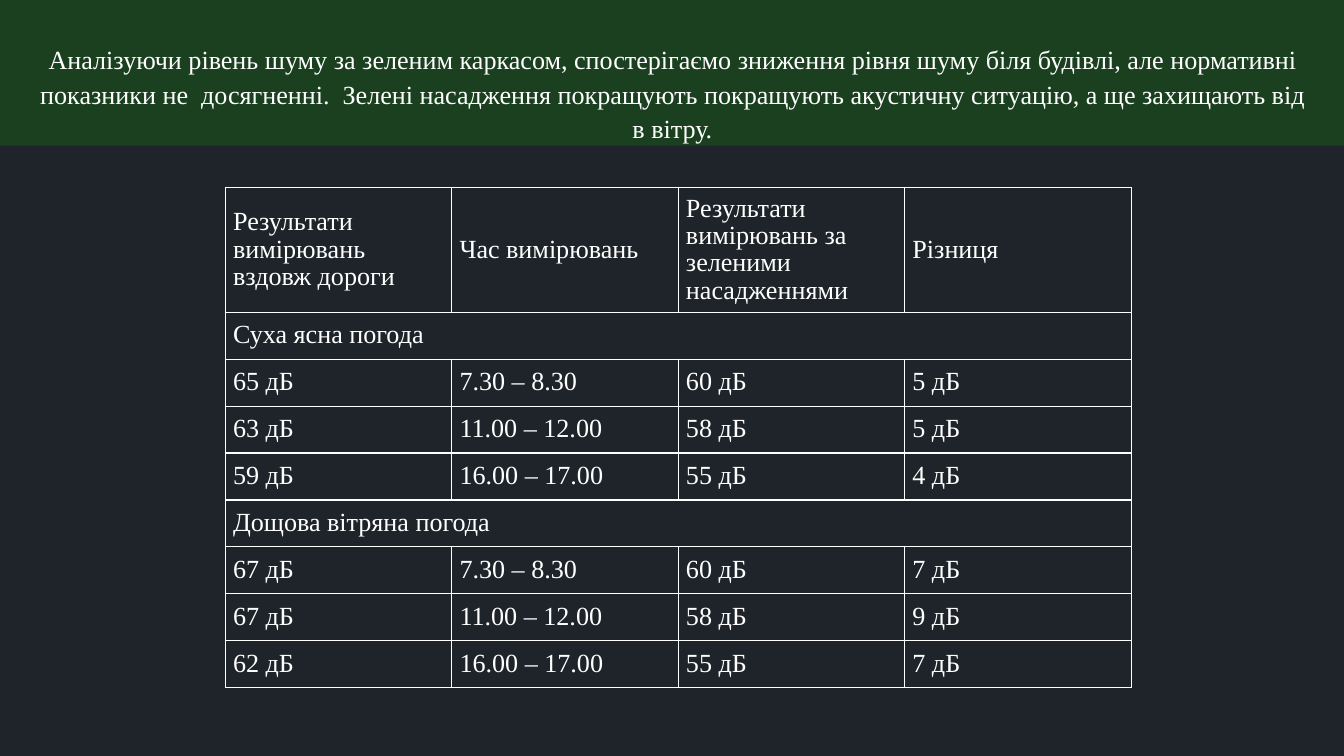
from dataclasses import dataclass

from lxml import etree
from pptx import Presentation
from pptx.dml.color import RGBColor
from pptx.enum.shapes import MSO_SHAPE
from pptx.enum.text import MSO_ANCHOR, MSO_AUTO_SIZE, PP_ALIGN
from pptx.oxml.ns import qn
from pptx.util import Emu, Pt

RECT = MSO_SHAPE.RECTANGLE
TOP, MIDDLE = MSO_ANCHOR.TOP, MSO_ANCHOR.MIDDLE
LEFT, CENTER = PP_ALIGN.LEFT, PP_ALIGN.CENTER
NO_FIT = MSO_AUTO_SIZE.NONE
SCALE = 9525


@dataclass(frozen=True)
class Theme:
    """Colours, font and type sizes of the slide."""
    back: str = "1E2429"
    band: str = "1A401F"
    ink: str = "FFFFFF"
    font: str = "Times New Roman"
    size: float = 28
    title_lead: float = 37
    cell_lead: float = 29.3
    rule: float = 1.5


THEME = Theme()
TITLE = (
    "Аналізуючи рівень шуму за зеленим каркасом, спостерігаємо зниження рівня шуму "
    "біля будівлі, але нормативні показники не  досягненні.  Зелені насадження "
    "покращують покращують акустичну ситуацію, а ще захищають від в вітру."
)
HEADS = [
    "Результати вимірювань вздовж дороги",
    "Час вимірювань",
    "Результати вимірювань за зеленими насадженнями",
    "Різниця",
]
TIMES = ["7.30 – 8.30", "11.00 – 12.00", "16.00 – 17.00"]
GROUPS = {
    "Суха ясна погода": [(65, 60, 5), (63, 58, 5), (59, 55, 4)],
    "Дощова вітряна погода": [(67, 60, 7), (67, 58, 9), (62, 55, 7)],
}


def px(count):
    """Turn pixels into EMU."""
    return Emu(round(count * SCALE))


def style(frame, align, lead):
    """Format every paragraph and run of a text frame."""
    for para in frame.paragraphs:
        para.alignment = align
        para.line_spacing = Pt(lead)
        para.space_before = para.space_after = Pt(0)
        for run in para.runs:
            run.font.name = THEME.font
            run.font.size = Pt(THEME.size)
            run.font.color.rgb = RGBColor.from_string(THEME.ink)


def add_header(slide, left, top, width, height):
    """Place the green band and the title over it."""
    band = slide.shapes.add_shape(RECT, px(left), px(top), px(width), px(height))
    band.shadow.inherit = False
    band.fill.solid()
    band.fill.fore_color.rgb = RGBColor.from_string(THEME.band)
    band.line.fill.background()
    title = slide.shapes.title
    title._element.addprevious(band._element)
    title.left, title.top = px(left + 49), px(top + 58)
    title.width, title.height = px(width - 97), px(height - 58)
    frame = title.text_frame
    frame.text = TITLE
    frame.word_wrap = True
    frame.auto_size = NO_FIT
    frame.vertical_anchor = TOP
    frame.margin_left = frame.margin_right = 0
    frame.margin_top = frame.margin_bottom = 0
    style(frame, CENTER, THEME.title_lead)


def add_rules(cell):
    """Draw a solid line on each side of a cell."""
    props = cell._tc.get_or_add_tcPr()
    for spot, side in enumerate(("a:lnL", "a:lnR", "a:lnT", "a:lnB")):
        line = etree.Element(qn(side), w=str(Pt(THEME.rule)))
        fill = etree.SubElement(line, qn("a:solidFill"))
        etree.SubElement(fill, qn("a:srgbClr"), val=THEME.ink)
        props.insert(spot, line)


def set_cell(cell, text):
    """Fill in and format one table cell."""
    cell.text_frame.text = text
    cell.vertical_anchor = MIDDLE
    cell.margin_left = cell.margin_right = px(11)
    cell.margin_top = cell.margin_bottom = px(11)
    cell.fill.background()
    add_rules(cell)
    style(cell.text_frame, LEFT, THEME.cell_lead)


def list_rows():
    """Return the table rows, with a single entry for a group row."""
    rows = [HEADS]
    for name, levels in GROUPS.items():
        rows.append([name])
        for time, (road, green, drop) in zip(TIMES, levels):
            rows.append([f"{road} дБ", time, f"{green} дБ", f"{drop} дБ"])
    return rows


def add_grid(slide, left, top, width, height):
    """Place the table of noise levels."""
    rows, cols = list_rows(), len(HEADS)
    head = 178
    step = (height - head) / (len(rows) - 1)
    grid = slide.shapes.add_table(
        len(rows), cols, px(left), px(top), px(width), px(height)
    ).table
    grid.first_row = grid.horz_banding = False
    for col in grid.columns:
        col.width = px(width / cols)
    for r, row in enumerate(rows):
        grid.rows[r].height = px(step if r else head)
        if len(row) == 1:
            grid.cell(r, 0).merge(grid.cell(r, cols - 1))
        for c in range(cols):
            set_cell(grid.cell(r, c), row[c] if c < len(row) else "")


def main():
    """Build and save the slide."""
    deck = Presentation()
    deck.slide_width, deck.slide_height = px(1920), px(1080)
    slide = deck.slides.add_slide(deck.slide_layouts[5])
    back = slide.background.fill
    back.solid()
    back.fore_color.rgb = RGBColor.from_string(THEME.back)
    add_header(slide, 0, 0, 1920, 208)
    add_grid(slide, 322, 268, 1294, 714)
    deck.save("out.pptx")


if __name__ == "__main__":
    main()
